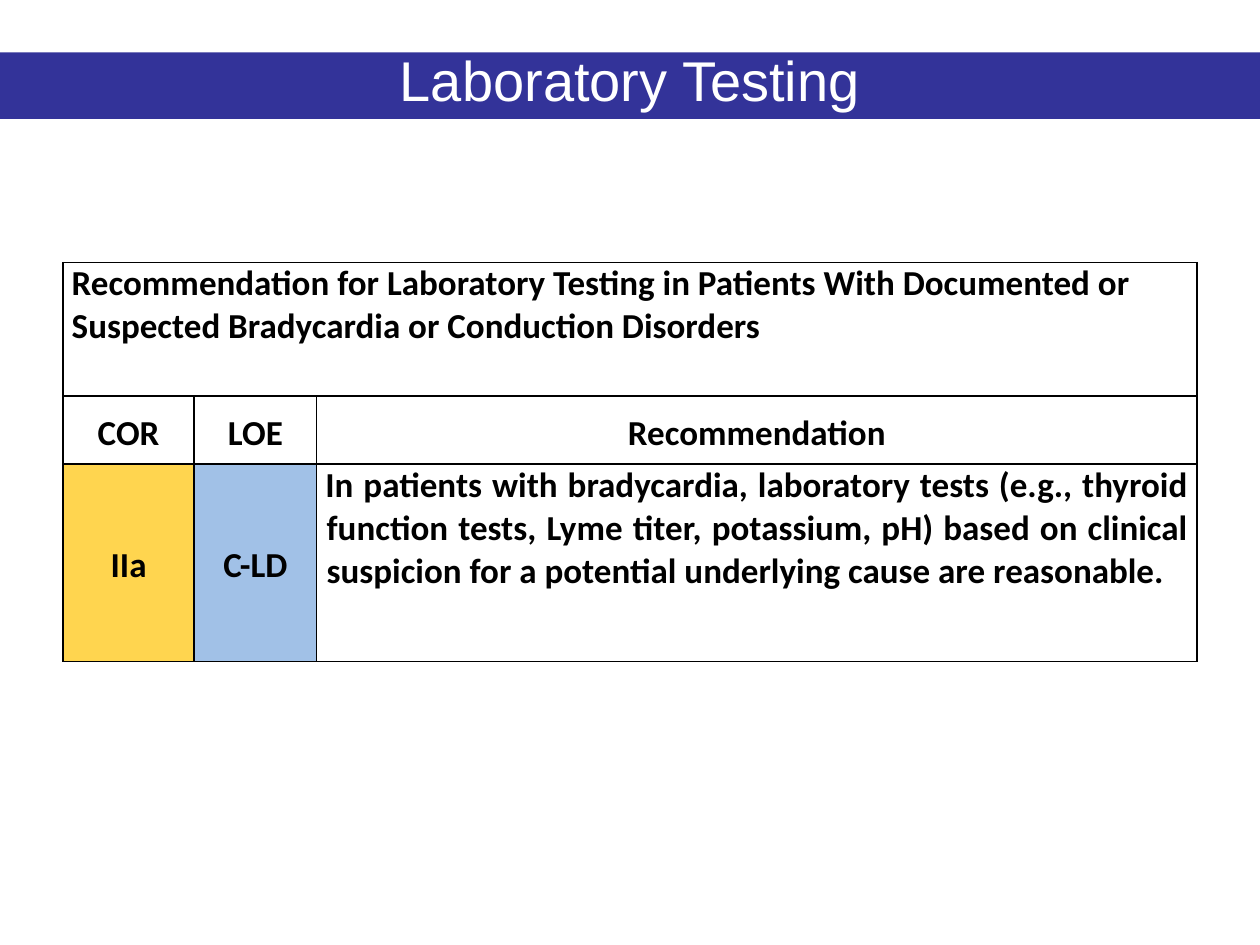
from dataclasses import dataclass

from lxml import etree
from pptx import Presentation
from pptx.dml.color import RGBColor as Color
from pptx.enum.text import MSO_ANCHOR as Anchor, MSO_AUTO_SIZE as AutoSize, PP_ALIGN as Align
from pptx.oxml.ns import qn
from pptx.util import Pt


@dataclass(frozen=True)
class Theme:
    """Colours, fonts and type sizes of the deck."""
    band: str = "333399"
    title: str = "FFFFFF"
    ink: str = "000000"
    moderate: str = "FFD54F"
    limited: str = "A1C1E7"
    title_font: str = "Arial"
    table_font: str = "Calibri"
    title_size: float = 32
    table_size: float = 20
    border: float = 1


THEME = Theme()
HEADING = ("Recommendation for Laboratory Testing in Patients With Documented or "
           "Suspected Bradycardia or Conduction Disorders")
ADVICE = ("In patients with bradycardia, laboratory tests (e.g., thyroid function tests, "
          "Lyme titer, potassium, pH) based on clinical suspicion for a potential "
          "underlying cause are reasonable.")
ROWS = [[HEADING, "", ""], ["COR", "LOE", "Recommendation"], ["IIa", "C-LD", ADVICE]]
ROW_SHARES = (76.3, 39, 112.7)
COLUMN_SHARES = (75, 70, 503)


def place(shape, box):
    """Move and size a shape to a box given in points."""
    shape.left, shape.top, shape.width, shape.height = (Pt(value) for value in box)


def style_font(font, name, size, colour, bold=False):
    """Set the face, size, colour and weight of a font."""
    font.name, font.size, font.bold = name, Pt(size), bold
    font.color.rgb = Color.from_string(colour)


def add_title(page, text, box):
    """Format the title placeholder as a coloured band."""
    title = page.shapes.title
    place(title, box)
    title.fill.solid()
    title.fill.fore_color.rgb = Color.from_string(THEME.band)
    frame = title.text_frame
    frame.text = text
    frame.word_wrap = True
    frame.auto_size = AutoSize.NONE
    frame.vertical_anchor = Anchor.MIDDLE
    para = frame.paragraphs[0]
    para.alignment = Align.CENTER
    para.line_spacing = 0.8
    style_font(para.runs[0].font, THEME.title_font, THEME.title_size, THEME.title)


def add_borders(cell):
    """Draw a solid line on all four sides of a cell."""
    properties = cell._tc.get_or_add_tcPr()
    for index, side in enumerate(("a:lnL", "a:lnR", "a:lnT", "a:lnB")):
        line = etree.Element(qn(side), w=str(Pt(THEME.border)))
        fill = etree.SubElement(line, qn("a:solidFill"))
        etree.SubElement(fill, qn("a:srgbClr"), val=THEME.ink)
        properties.insert(index, line)


def format_cell(cell, text, fill=None):
    """Write one cell, as a centred label or as running text."""
    cell.margin_left = cell.margin_right = Pt(5)
    cell.margin_top = cell.margin_bottom = 0
    if fill:
        cell.fill.solid()
        cell.fill.fore_color.rgb = Color.from_string(fill)
    else:
        cell.fill.background()
    add_borders(cell)
    if not text:
        return
    cell.text_frame.text = text
    para = cell.text_frame.paragraphs[0]
    if text == HEADING:
        para.alignment = Align.LEFT
    elif text == ADVICE:
        para.alignment = Align.JUSTIFY
        indent = para._p.get_or_add_pPr()
        indent.set("marL", str(Pt(0.72)))
        indent.set("indent", str(-Pt(0.72)))
    else:
        cell.vertical_anchor = Anchor.MIDDLE
        para.alignment = Align.CENTER
        para.line_spacing = 1.15
    style_font(para.runs[0].font, THEME.table_font, THEME.table_size, THEME.ink, True)


def add_recommendations(page, box):
    """Build the recommendation table inside the box."""
    left, top, width, height = box
    frame = page.shapes.add_table(len(ROWS), len(COLUMN_SHARES),
                                  Pt(left), Pt(top), Pt(width), Pt(height))
    table = frame.table
    table.first_row = table.horz_banding = False
    for column, share in zip(table.columns, COLUMN_SHARES):
        column.width = Pt(width * share / sum(COLUMN_SHARES))
    for row, share in zip(table.rows, ROW_SHARES):
        row.height = Pt(height * share / sum(ROW_SHARES))
    table.cell(0, 0).merge(table.cell(0, 2))
    fills = {"IIa": THEME.moderate, "C-LD": THEME.limited}
    for row, texts in zip(table.rows, ROWS):
        for cell, text in zip(row.cells, texts):
            format_cell(cell, text, fills.get(text))


def main():
    """Build and save the deck."""
    deck = Presentation()
    deck.slide_width, deck.slide_height = Pt(720), Pt(540)
    page = deck.slides.add_slide(deck.slide_layouts[5])
    add_title(page, "Laboratory Testing", (0, 30, 720, 38))
    add_recommendations(page, (36, 150, 648, 228))
    deck.save("out.pptx")


if __name__ == "__main__":
    main()
